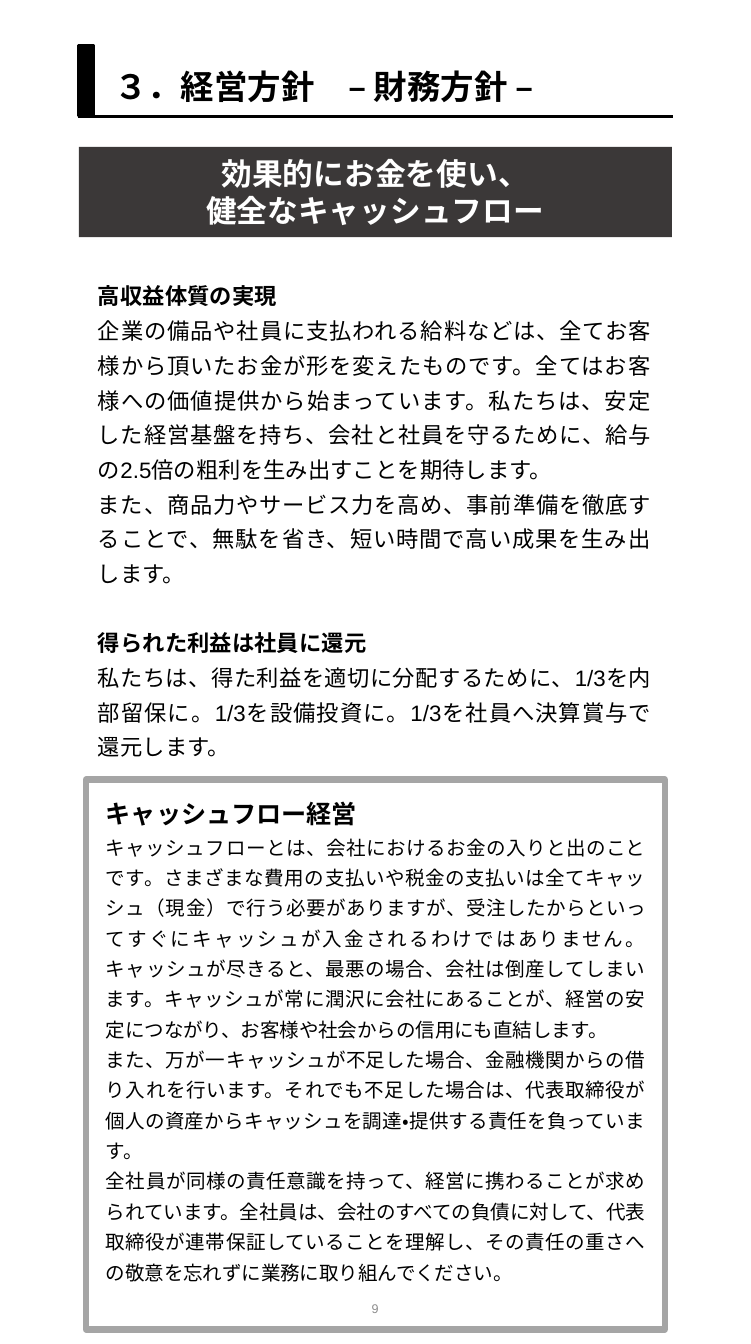
from pptx import Presentation
from pptx import util as u
from pptx.dml import color
from pptx.enum import lang, shapes, text
from pptx.oxml import ns
from lxml import etree

COLOURS = {
    "ink": "000000",
    "paper": "FFFFFF",
    "banner": "3B3838",
    "frame": "A5A5A5",
    "page": "8C8C8C",
}
FONT = {"name": "Arial", "language_id": lang.MSO_LANGUAGE_ID.JAPANESE}
JUSTIFIED = {"alignment": text.PP_ALIGN.JUSTIFY, "line_spacing": 1.3}
CENTRED = {"alignment": text.PP_ALIGN.CENTER}
LEFT = {"alignment": text.PP_ALIGN.LEFT}

TITLE = "３．経営方針　– 財務方針 –"
SLOGAN = ["効果的にお金を使い、", "健全なキャッシュフロー"]
POLICIES = [
    ("高収益体質の実現", [
        "企業の備品や社員に支払われる給料などは、全てお客様から頂いたお金が形を変えたものです。"
        "全てはお客様への価値提供から始まっています。私たちは、安定した経営基盤を持ち、"
        "会社と社員を守るために、給与の2.5倍の粗利を生み出すことを期待します。",
        "また、商品力やサービス力を高め、事前準備を徹底することで、無駄を省き、"
        "短い時間で高い成果を生み出します。",
    ]),
    ("得られた利益は社員に還元", [
        "私たちは、得た利益を適切に分配するために、1/3を内部留保に。"
        "1/3を設備投資に。1/3を社員へ決算賞与で還元します。",
    ]),
]
CASH_FLOW = ("キャッシュフロー経営", [
    "キャッシュフローとは、会社におけるお金の入りと出のことです。"
    "さまざまな費用の支払いや税金の支払いは全てキャッシュ（現金）で行う必要がありますが、"
    "受注したからといってすぐにキャッシュが入金されるわけではありません。"
    "キャッシュが尽きると、最悪の場合、会社は倒産してしまいます。"
    "キャッシュが常に潤沢に会社にあることが、経営の安定につながり、"
    "お客様や社会からの信用にも直結します。",
    "また、万が一キャッシュが不足した場合、金融機関からの借り入れを行います。"
    "それでも不足した場合は、代表取締役が個人の資産からキャッシュを調達・提供する責任を負っています。",
    "全社員が同様の責任意識を持って、経営に携わることが求められています。"
    "全社員は、会社のすべての負債に対して、代表取締役が連帯保証していることを理解し、"
    "その責任の重さへの敬意を忘れずに業務に取り組んでください。",
])


def rgb(name):
    return color.RGBColor.from_string(COLOURS[name])


def apply(target, formats):
    for attribute, value in formats.items():
        setattr(target, attribute, value)


def prepare_frame(frame, anchor=text.MSO_ANCHOR.TOP):
    apply(frame, {
        "word_wrap": True,
        "auto_size": text.MSO_AUTO_SIZE.NONE,
        "vertical_anchor": anchor,
    })
    return frame


def write(frame, wording, size, layout, ink="ink", bold=False, gap=0):
    paragraph = frame.paragraphs[0]
    if paragraph.runs:
        paragraph = frame.add_paragraph()
    apply(paragraph, {**layout, "space_before": u.Pt(gap)})
    run = paragraph.add_run()
    run.text = wording
    apply(run.font, {**FONT, "size": u.Pt(size), "bold": bold})
    run.font.color.rgb = rgb(ink)


def write_section(frame, section, heading_size, body_size, gap=0):
    heading, body = section
    write(frame, heading, heading_size, JUSTIFIED, bold=True, gap=gap)
    for wording in body:
        write(frame, wording, body_size, JUSTIFIED)


def add_panel(slide, box, fill, line=None, width=1):
    panel = slide.shapes.add_shape(shapes.MSO_SHAPE.RECTANGLE, *map(u.Cm, box))
    panel.shadow.inherit = False
    panel.fill.solid()
    panel.fill.fore_color.rgb = rgb(fill)
    if line:
        panel.line.color.rgb = rgb(line)
        panel.line.width = u.Pt(width)
    else:
        panel.line.fill.background()
    return panel


def add_rule(slide, ends):
    rule = slide.shapes.add_connector(shapes.MSO_CONNECTOR.STRAIGHT, *map(u.Cm, ends))
    rule.line.color.rgb = rgb("ink")
    rule.line.width = u.Pt(1)
    etree.SubElement(rule._element.spPr, ns.qn("a:effectLst"))


def add_text(slide, box, anchor=text.MSO_ANCHOR.TOP):
    return prepare_frame(slide.shapes.add_textbox(*map(u.Cm, box)).text_frame, anchor)


def place_title(slide):
    title = slide.shapes.title
    apply(title, {
        "left": u.Cm(1.19), "top": u.Cm(0.71),
        "width": u.Cm(7.14), "height": u.Cm(0.76),
    })
    write(prepare_frame(title.text_frame), TITLE, 12, LEFT, bold=True)


def main():
    deck = Presentation()
    apply(deck, {"slide_width": u.Cm(9.5), "slide_height": u.Cm(17)})
    slide = deck.slides.add_slide(deck.slide_layouts[5])

    add_rule(slide, (0.99, 1.47, 8.51, 1.47))
    add_panel(slide, (0.99, 0.58, 0.2, 0.89), "ink", "ink")
    place_title(slide)

    banner = add_panel(slide, (1, 1.86, 7.5, 1.14), "banner")
    slogan = prepare_frame(banner.text_frame, text.MSO_ANCHOR.MIDDLE)
    for wording in SLOGAN:
        write(slogan, wording, 11, CENTRED, "paper", bold=True)

    policy = add_text(slide, (0.99, 3.35, 7.5, 6.45))
    for index, section in enumerate(POLICIES):
        write_section(policy, section, 8, 8, gap=12.4 * index)

    cash_box = add_panel(slide, (1.09, 9.86, 7.32, 6.96), "paper", "frame", 2.25)
    write_section(prepare_frame(cash_box.text_frame), CASH_FLOW, 9, 7)

    page = add_text(slide, (3.68, 16.1, 2.13, 0.91), text.MSO_ANCHOR.MIDDLE)
    write(page, "9", 4.5, CENTRED, "page")

    deck.save("out.pptx")


if __name__ == "__main__":
    main()
